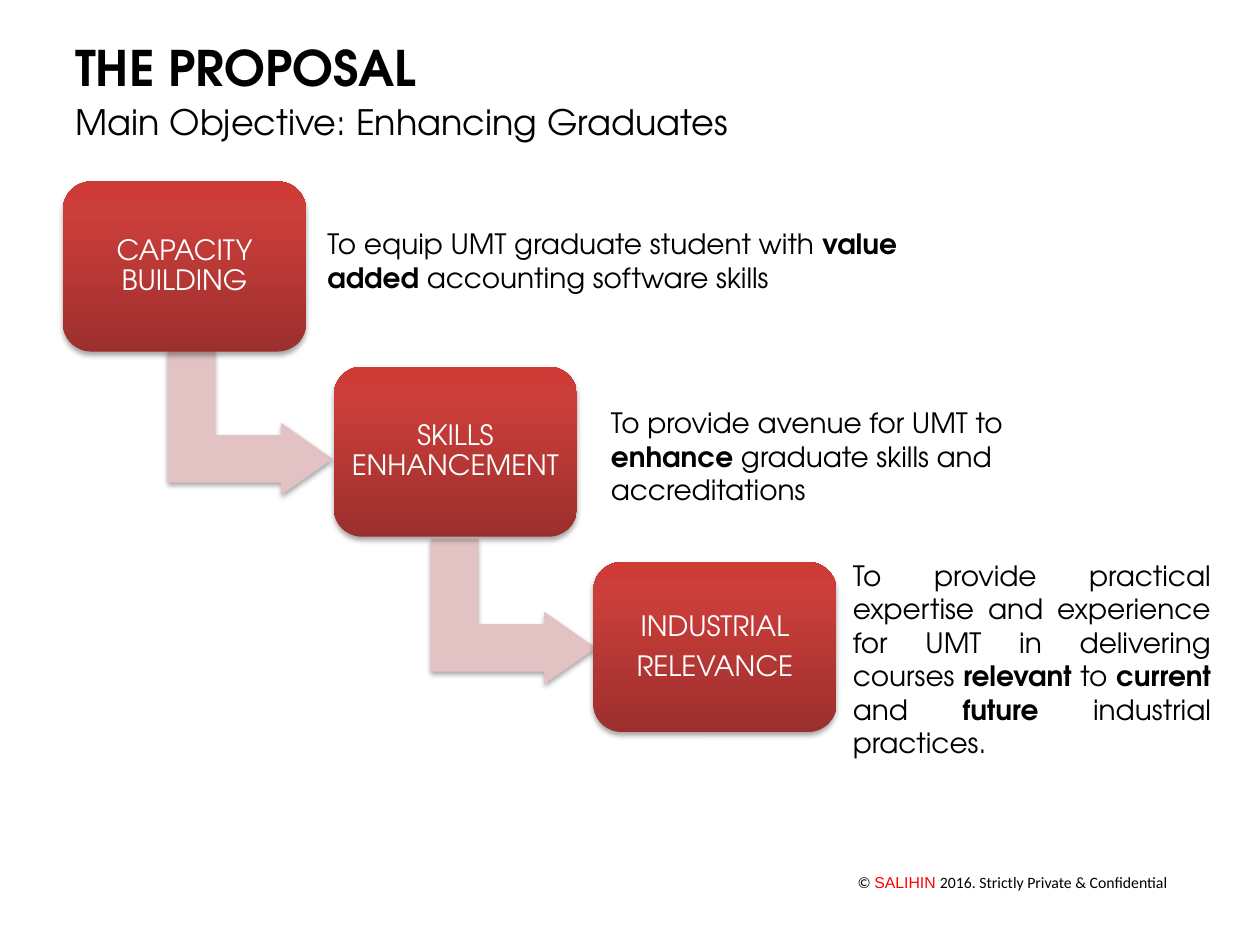
from dataclasses import dataclass

from lxml import etree
from pptx import Presentation
from pptx.dml.color import RGBColor as Rgb
from pptx.enum import shapes as sh, text as tx
from pptx.oxml import ns
from pptx.util import Inches, Pt
from copy import deepcopy


@dataclass(frozen=True)
class Theme:
    font: str = "TeX Gyre Adventor"
    ink: str = "000000"
    light: str = "FFFFFF"
    mark: str = "FF0000"
    arrow: str = "E2C2C2"
    reds: tuple = ((0, "9C2F2D"), (0.8, "CB3E3A"), (1, "CE3B37"))
    title: int = 28
    sub: int = 20
    body: int = 16
    foot: int = 9


T = Theme()
BOX = (1.93, 1.35)
ARROW = (1.15, 1.31)

# Box corner, label lines, arrow offset from the box, note frame, alignment, note runs
STEPS = [
    ((0.5, 1.44), ["CAPACITY BUILDING"], (0.91, 1.26),
     (2.5, 1.75, 4.92, 0.64), None,
     [("To equip UMT graduate student with ", False), ("value added ", True),
      ("accounting software skills", False)]),
    ((2.65, 2.91), ["SKILLS ENHANCEMENT"], (0.85, 1.29),
     (4.75, 3.17, 4.25, 0.91), None,
     [("To provide avenue for UMT to ", False), ("enhance", True),
      (" graduate skills and accreditations", False)]),
    ((4.71, 4.46), ["INDUSTRIAL", "RELEVANCE"], None,
     (6.67, 4.38, 3.04, 1.72), tx.PP_ALIGN.JUSTIFY,
     [("To provide practical expertise and experience for UMT in "
       "delivering courses ", False), ("relevant", True), (" to ", False),
      ("current", True), (" and ", False), ("future ", True),
      ("industrial practices.", False)]),
]


def add_run(para, words, size, color=T.ink, bold=False, font=T.font):
    run = para.add_run()
    run.text = words
    run.font.name, run.font.size, run.font.bold = font, Pt(size), bold
    run.font.color.rgb = Rgb.from_string(color)


def add_text(slide, box, align=None):
    """Add an empty wrapping text box and return its first paragraph."""
    frame = slide.shapes.add_textbox(*map(Inches, box)).text_frame
    frame.word_wrap = True
    frame.auto_size = tx.MSO_AUTO_SIZE.SHAPE_TO_FIT_TEXT
    para = frame.paragraphs[0]
    para.alignment = align
    return para


def add_solid(slide, kind, box):
    """Add a borderless shape with a soft shadow below it."""
    shape = slide.shapes.add_shape(kind, *map(Inches, box))
    shape.line.fill.background()
    shape.shadow.inherit = False
    effects = shape._element.spPr.find(ns.qn("a:effectLst"))
    cast = etree.SubElement(effects, ns.qn("a:outerShdw"), blurRad=str(Pt(3.1)),
                            dist=str(Pt(1.8)), dir="5400000", rotWithShape="0")
    color = etree.SubElement(cast, ns.qn("a:srgbClr"), val="000000")
    etree.SubElement(color, ns.qn("a:alpha"), val="35000")
    return shape


def fill_red(shape):
    shape.fill.gradient()
    shape.fill.gradient_angle = 90
    stops = shape._element.spPr.find(".//" + ns.qn("a:gsLst"))
    stops.append(deepcopy(stops[-1]))
    for stop, (place, color) in zip(shape.fill.gradient_stops, T.reds):
        stop.position = place
        stop.color.rgb = Rgb.from_string(color)


def add_arrow(slide, left, top):
    arrow = add_solid(slide, sh.MSO_SHAPE.BENT_UP_ARROW, (left, top, *ARROW))
    arrow.rotation = 90
    for i, value in enumerate((0.328, 0.25, 0.358)):
        arrow.adjustments[i] = value
    arrow.fill.solid()
    arrow.fill.fore_color.rgb = Rgb.from_string(T.arrow)


def add_card(slide, left, top, lines):
    card = add_solid(slide, sh.MSO_SHAPE.ROUNDED_RECTANGLE, (left, top, *BOX))
    fill_red(card)
    frame = card.text_frame
    frame.word_wrap = True
    frame.vertical_anchor = tx.MSO_ANCHOR.MIDDLE
    frame.margin_left = frame.margin_right = Inches(0.07)
    frame.margin_top = frame.margin_bottom = Inches(0.07)
    for i, line in enumerate(lines):
        para = frame.add_paragraph() if i else frame.paragraphs[0]
        para.alignment = tx.PP_ALIGN.CENTER
        para.line_spacing = 0.9
        para.space_after = Pt(5.6)
        add_run(para, line, T.body, T.light)


def add_step(slide, corner, lines, shift, note, align, runs):
    left, top = corner
    if shift:
        add_arrow(slide, left + shift[0], top + shift[1])
    add_card(slide, left, top, lines)
    para = add_text(slide, note, align)
    for words, bold in runs:
        add_run(para, words, T.body, bold=bold)


def add_head(slide, left, top):
    add_run(add_text(slide, (left, top, 4.42, 0.57)),
            "THE PROPOSAL", T.title, bold=True)
    add_run(add_text(slide, (left, top + 0.5, 6.75, 0.44)),
            "Main Objective: Enhancing Graduates", T.sub)


def add_foot(slide, box):
    para = add_text(slide, box, tx.PP_ALIGN.RIGHT)
    add_run(para, "© ", T.foot, font="Calibri")
    add_run(para, "SALIHIN ", T.foot, T.mark, font="Arial")
    add_run(para, "2016. Strictly Private & Confidential", T.foot, font="Calibri")


def main():
    deck = Presentation()
    deck.slide_width, deck.slide_height = Inches(10), Inches(7.5)
    slide = deck.slides.add_slide(deck.slide_layouts[6])
    add_foot(slide, (6.67, 6.88, 2.69, 0.25))
    add_head(slide, 0.5, 0.25)
    for step in STEPS:
        add_step(slide, *step)
    deck.save("out.pptx")


if __name__ == "__main__":
    main()
